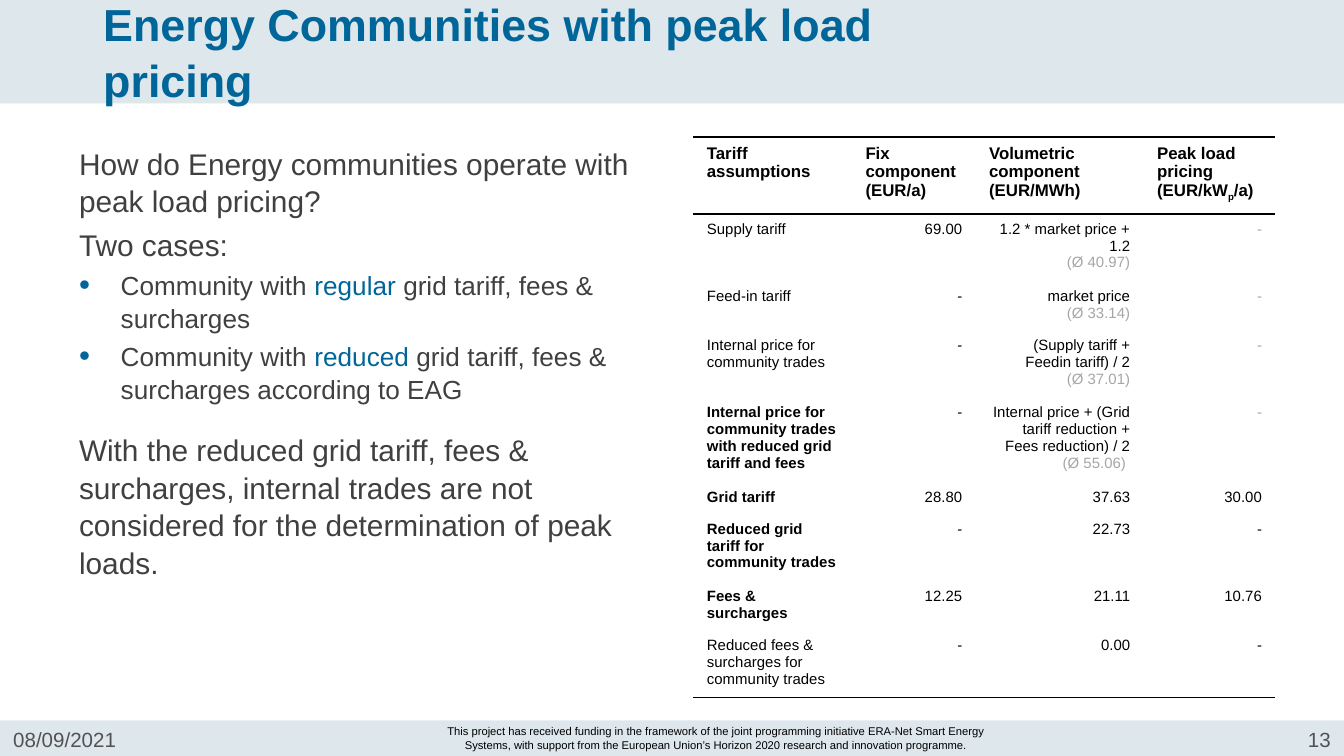
from dataclasses import dataclass
from typing import NamedTuple

from lxml.etree import SubElement
from pptx import Presentation
from pptx.dml.color import RGBColor
from pptx.enum.shapes import MSO_SHAPE
from pptx.enum.text import MSO_ANCHOR, PP_ALIGN
from pptx.oxml import parse_xml
from pptx.oxml.ns import nsdecls, qn
from pptx.util import Inches, Pt

BLUE = RGBColor(0x00, 0x66, 0x99)
BAND = RGBColor(0xDE, 0xE7, 0xEC)
WHITE = RGBColor(0xFF, 0xFF, 0xFF)
BLACK = RGBColor(0x00, 0x00, 0x00)
DARK = RGBColor(0x40, 0x40, 0x40)
GREY = RGBColor(0x52, 0x52, 0x52)
LIGHT = RGBColor(0xA6, 0xA6, 0xA6)

FONT = "Arial"
LINE_SPACING = 1.05
NO_STYLE = "{2D5ABB26-0587-4C30-8999-92F81FD0307C}"

# The slide is a grid of 100 columns by 56.25 rows of square units
UNIT = Inches(0.1)
COLUMNS, ROWS = 100, 56.25
BAND_TOP, FOOTER_TOP = 7.7, 53.6
MARGIN, CONTENT_TOP, PANEL_WIDTH = 4.9, 10.2, 43.3
FOOTER_HEIGHT, FOOTER_SIDE = 2.6, 25.6


class Area(NamedTuple):
    column: float
    row: float
    columns: float
    rows: float

    def lengths(self) -> list[int]:
        return [round(value * UNIT) for value in self]


class Run(NamedTuple):
    text: str
    color: RGBColor
    baseline: int = 0


@dataclass
class Line:
    runs: list[Run]
    size: float
    bold: bool = False
    align: PP_ALIGN = PP_ALIGN.LEFT
    bullet: bool = False


@dataclass
class Tariff:
    name: str
    fix: str
    volumetric: str
    peak: str
    average: str = ""
    bold: bool = False
    peak_color: RGBColor = BLACK


def add_bullet(paragraph) -> None:
    properties = paragraph._p.get_or_add_pPr()
    indent = Inches(0.31)
    properties.set("marL", str(indent))
    properties.set("indent", str(-indent))
    color = SubElement(properties, qn("a:buClr"))
    SubElement(color, qn("a:srgbClr")).set("val", str(BLUE))
    SubElement(properties, qn("a:buSzPct")).set("val", "120000")
    SubElement(properties, qn("a:buFont")).set("typeface", FONT)
    SubElement(properties, qn("a:buChar")).set("char", "•")


def write_lines(text_frame, lines: list[Line], spacing: float | None = None) -> None:
    for index, line in enumerate(lines):
        paragraph = text_frame.add_paragraph() if index else text_frame.paragraphs[0]
        paragraph.alignment = line.align
        if spacing:
            paragraph.line_spacing = spacing
            if index:
                paragraph.space_before = Pt(line.size * 0.2)
        if line.bullet:
            add_bullet(paragraph)
        for part in line.runs:
            run = paragraph.add_run()
            run.text = part.text
            run.font.name = FONT
            run.font.size = Pt(line.size)
            run.font.bold = line.bold
            run.font.color.rgb = part.color
            if part.baseline:
                run.font._element.set("baseline", str(part.baseline * 1000))


def add_text(slide, area: Area, lines: list[Line], anchor=MSO_ANCHOR.TOP,
             spacing: float | None = LINE_SPACING) -> None:
    text_frame = slide.shapes.add_textbox(*area.lengths()).text_frame
    text_frame.word_wrap = True
    text_frame.vertical_anchor = anchor
    write_lines(text_frame, lines, spacing)


def add_border(cell, edge: str) -> None:
    border = parse_xml(
        f'<a:{edge} {nsdecls("a")} w="{Pt(1)}"><a:solidFill>'
        f'<a:srgbClr val="{BLACK}"/></a:solidFill></a:{edge}>'
    )
    cell._tc.get_or_add_tcPr().insert(0, border)


def tariff_cells(tariff: Tariff) -> list[list[Line]]:
    def value(text: str, color: RGBColor = BLACK) -> Line:
        return Line([Run(text, color)], 8, align=PP_ALIGN.RIGHT)

    volumetric = [value(tariff.volumetric)]
    if tariff.average:
        volumetric.append(value(tariff.average, LIGHT))
    return [
        [Line([Run(tariff.name, BLACK)], 8, tariff.bold)],
        [value(tariff.fix)],
        volumetric,
        [value(tariff.peak, tariff.peak_color)],
    ]


def add_tariff_table(slide, column: float, row: float, widths: list[float],
                     heights: list[float], cells: list[list[list[Line]]]) -> None:
    area = Area(column, row, sum(widths), sum(heights))
    table = slide.shapes.add_table(len(heights), len(widths), *area.lengths()).table
    table.first_row = table.horz_banding = False
    table._tbl.tblPr.find(qn("a:tableStyleId")).text = NO_STYLE
    for table_column, width in zip(table.columns, widths):
        table_column.width = round(width * UNIT)
    for row_index, (table_row, height) in enumerate(zip(table.rows, heights)):
        table_row.height = round(height * UNIT)
        for cell, lines in zip(table_row.cells, cells[row_index]):
            cell.fill.background()
            write_lines(cell.text_frame, lines)
            if row_index in (0, len(heights) - 1):
                add_border(cell, "lnB")
            if row_index == 0:
                add_border(cell, "lnT")


HEADERS = [
    [Run("Tariff assumptions", BLACK)],
    [Run("Fix component (EUR/a)", BLACK)],
    [Run("Volumetric component (EUR/MWh)", BLACK)],
    [Run("Peak load pricing (EUR/kW", BLACK), Run("p", BLACK, -25), Run("/a)", BLACK)],
]
TARIFFS = [
    Tariff("Supply tariff", "69.00", "1.2 * market price + 1.2", "-", "(Ø 40.97)",
           peak_color=LIGHT),
    Tariff("Feed-in tariff", "-", "market price", "-", "(Ø 33.14)", peak_color=LIGHT),
    Tariff("Internal price for community trades", "-",
           "(Supply tariff + Feedin tariff) / 2", "-", "(Ø 37.01)", peak_color=LIGHT),
    Tariff("Internal price for community trades with reduced grid tariff and fees", "-",
           "Internal price + (Grid tariff reduction + Fees reduction) / 2", "-",
           "(Ø 55.06) ", bold=True, peak_color=LIGHT),
    Tariff("Grid tariff", "28.80", "37.63", "30.00", bold=True),
    Tariff("Reduced grid tariff for community trades", "-", "22.73", "-", bold=True),
    Tariff("Fees & surcharges", "12.25", "21.11", "10.76", bold=True),
    Tariff("Reduced fees & surcharges for community trades", "-", "0.00", "-"),
]
QUESTION = [
    Line([Run("How do Energy communities operate with peak load pricing?", DARK)], 16),
    Line([Run("Two cases:", DARK)], 16),
] + [
    Line([Run("Community with ", DARK), Run(f"{case} ", BLUE), Run(ending, DARK)], 14,
         bullet=True)
    for case, ending in [
        ("regular", "grid tariff, fees & surcharges"),
        ("reduced", "grid tariff, fees & surcharges according to EAG"),
    ]
]
CONCLUSION = ("With the reduced grid tariff, fees & surcharges, internal trades are not "
              "considered for the determination of peak loads.")
FUNDING = ("This project has received funding in the framework of the joint programming "
           "initiative ERA-Net Smart Energy Systems, with support from the European "
           "Union’s Horizon 2020 research and innovation programme.")


def main() -> None:
    presentation = Presentation()
    presentation.slide_width = COLUMNS * UNIT
    presentation.slide_height = round(ROWS * UNIT)
    slide = presentation.slides.add_slide(presentation.slide_layouts[6])

    # Tinted background with a white content panel
    slide.background.fill.solid()
    slide.background.fill.fore_color.rgb = BAND
    area = Area(0, BAND_TOP, COLUMNS, FOOTER_TOP - BAND_TOP)
    panel = slide.shapes.add_shape(MSO_SHAPE.RECTANGLE, *area.lengths())
    panel.shadow.inherit = False
    panel.fill.solid()
    panel.fill.fore_color.rgb = WHITE
    panel.line.fill.background()

    # Title and left-hand text
    title = Run("Energy Communities with peak load pricing", BLUE)
    add_text(slide, Area(6.7, 0, 68.4, 7.5), [Line([title], 24, True)], MSO_ANCHOR.MIDDLE)
    add_text(slide, Area(MARGIN, CONTENT_TOP, PANEL_WIDTH, 20.7), QUESTION)
    add_text(slide, Area(MARGIN, 31.5, PANEL_WIDTH, 20.7),
             [Line([Run(CONCLUSION, DARK)], 16)])

    # Tariff table
    header = [[Line(runs, 9, True)] for runs in HEADERS]
    add_tariff_table(slide, 51.6, CONTENT_TOP, [11.8, 9.2, 12.5, 9.8],
                     [5.4, 4.8, 3.5, 4.8, 6, 2.2, 4.8, 3.5, 4.8],
                     [header] + [tariff_cells(tariff) for tariff in TARIFFS])

    # Footer: date, funding note, slide number
    number_left = COLUMNS - FOOTER_SIDE
    add_text(slide, Area(0, FOOTER_TOP, FOOTER_SIDE, FOOTER_HEIGHT),
             [Line([Run("08/09/2021", GREY)], 11)], spacing=None)
    add_text(slide, Area(32.1, FOOTER_TOP, number_left - 32.1, FOOTER_HEIGHT),
             [Line([Run(FUNDING, BLACK)], 6, align=PP_ALIGN.CENTER)], MSO_ANCHOR.MIDDLE)
    add_text(slide, Area(number_left, FOOTER_TOP, FOOTER_SIDE, FOOTER_HEIGHT),
             [Line([Run("13", GREY)], 11, align=PP_ALIGN.RIGHT)], spacing=None)

    presentation.save("out.pptx")


if __name__ == "__main__":
    main()
